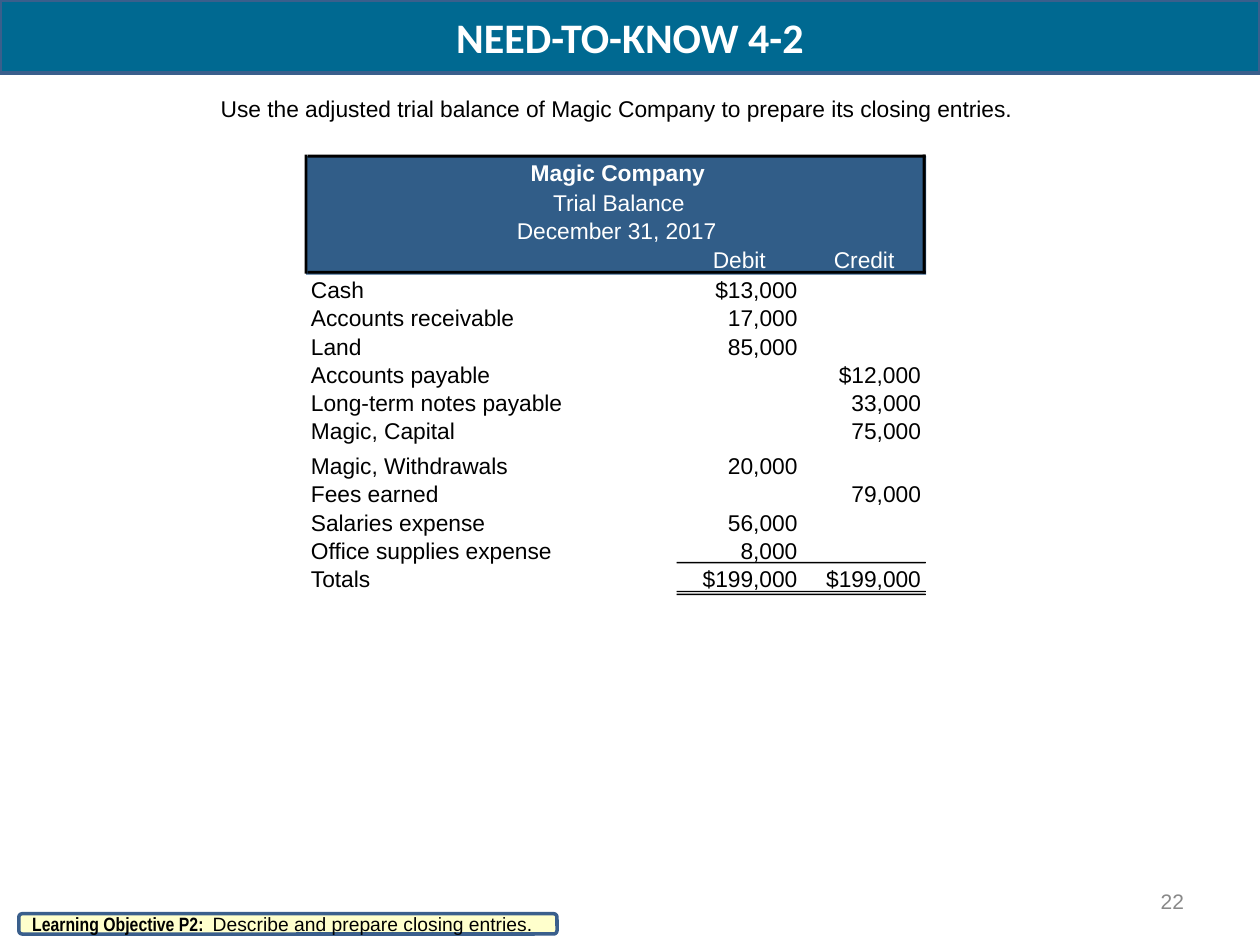
from lxml import etree
from pptx import Presentation
from pptx.dml.color import RGBColor
from pptx.enum.shapes import MSO_CONNECTOR, MSO_SHAPE
from pptx.enum.text import MSO_ANCHOR, PP_ALIGN
from pptx.oxml.ns import qn
from pptx.util import Cm, Pt

RECT, ROUND = MSO_SHAPE.RECTANGLE, MSO_SHAPE.ROUNDED_RECTANGLE
LINE = MSO_CONNECTOR.STRAIGHT
LEFT, CENTER, RIGHT = PP_ALIGN.LEFT, PP_ALIGN.CENTER, PP_ALIGN.RIGHT
TOP, MIDDLE = MSO_ANCHOR.TOP, MSO_ANCHOR.MIDDLE

BLACK = RGBColor(0, 0, 0)
WHITE = RGBColor(0xFF, 0xFF, 0xFF)
TEAL = RGBColor(0x00, 0x69, 0x91)
NAVY = RGBColor(0x31, 0x5D, 0x88)
EDGE = RGBColor(0x3A, 0x5F, 0x8C)
CREAM = RGBColor(0xFF, 0xFF, 0xCC)
GRAY = RGBColor(0x89, 0x89, 0x89)

# Accounts: name, name width, debit, credit
ROWS = [
    ("Cash", 1.22, "$13,000", ""),
    ("Accounts receivable", 4.22, "17,000", ""),
    ("Land", 1.19, "85,000", ""),
    ("Accounts payable", 3.76, "", "$12,000"),
    ("Long-term notes payable", 5.18, "", "33,000"),
    ("Magic, Capital", 2.95, "", "75,000"),
    ("Magic, Withdrawals", 4.01, "20,000", ""),
    ("Fees earned", 2.72, "", "79,000"),
    ("Salaries expense", 3.66, "56,000", ""),
    ("Office supplies expense", 4.98, "8,000", ""),
    ("Totals", 1.42, "$199,000", "$199,000"),
]
ROW_TOP, ROW_STEP, ROW_HIGH = 5.56, 0.57, 0.63
GAP_ROW, GAP = 6, 0.13
NAME_X, DEBIT_END, CREDIT_END = 6.27, 16.08, 18.57
DIGIT, COMMA, SLACK = 0.255, 0.13, 0.18


class Page:
    def __init__(self, slide):
        self.shapes = slide.shapes
        self.font, self.size = "Arial", 13

    def style(self, run, color, size=None, font=None, bold=False):
        run.font.name = font or self.font
        run.font.size = Pt(size or self.size)
        run.font.bold = bold
        run.font.color.rgb = color

    def box(self, x, y, w, h, fill, edge=None, kind=RECT):
        shape = self.shapes.add_shape(kind, Cm(x), Cm(y), Cm(w), Cm(h))
        shape.shadow.inherit = False
        shape.fill.solid()
        shape.fill.fore_color.rgb = fill
        if edge is None:
            shape.line.fill.background()
        else:
            shape.line.color.rgb = edge
            shape.line.width = Pt(2)
        return shape

    def label(self, text, x, y, w, h=ROW_HIGH, color=BLACK, align=LEFT,
              anchor=TOP, size=None, bold=False):
        frame = self.shapes.add_textbox(Cm(x), Cm(y), Cm(w), Cm(h)).text_frame
        frame.word_wrap = False
        frame.vertical_anchor = anchor
        frame.margin_left = frame.margin_right = 0
        frame.margin_top = frame.margin_bottom = 0
        frame.text = text
        para = frame.paragraphs[0]
        para.alignment = align
        self.style(para.runs[0], color, size, bold=bold)

    def amount(self, text, end, y):
        if text:
            wide = DIGIT * (len(text) - 1) + COMMA
            self.label(text, end - wide, y, wide + SLACK)

    def rule(self, x, y, w):
        line = self.shapes.add_connector(LINE, Cm(x), Cm(y), Cm(x + w), Cm(y))
        line.line.color.rgb = BLACK
        line.line.width = Pt(0.1)
        etree.SubElement(line._element.spPr, qn("a:effectLst"))
        self.box(x, y, w, 0.03, BLACK)


def main():
    deck = Presentation()
    deck.slide_width, deck.slide_height = Cm(25.4), Cm(19.05)
    page = Page(deck.slides.add_slide(deck.slide_layouts[6]))

    # Title bar
    frame = page.box(0, 0, 25.4, 1.47, TEAL, EDGE).text_frame
    frame.text = "NEED-TO-KNOW 4-2"
    frame.vertical_anchor = MIDDLE
    frame.paragraphs[0].alignment = CENTER
    page.style(frame.paragraphs[0].runs[0], WHITE, 24, "Calibri", True)

    # Task
    page.label("Use the adjusted trial balance of Magic Company to prepare "
               "its closing entries.", 4.45, 1.91, 16.18, 0.56)

    # Statement heading
    page.box(6.17, 3.15, 12.5, 2.39, NAVY)
    for text, x, y, w, bold in [
        ("Magic Company", 10.7, 3.2, 3.66, True),
        ("Trial Balance", 11.15, 3.81, 2.82, False),
        ("December 31, 2017", 10.42, 4.37, 4.09, False),
        ("Debit", 14.37, 4.95, 1.22, False),
        ("Credit", 16.81, 4.95, 1.4, False),
    ]:
        page.label(text, x, y, w, color=WHITE, bold=bold)

    # Heading frame
    for x in (6.14, 18.6):
        page.box(x, 3.12, 0.06, 2.4, BLACK)
    for y in (3.12, 5.46):
        page.box(6.2, y, 12.46, 0.06, BLACK)

    # Account rows
    for i, (name, wide, debit, credit) in enumerate(ROWS):
        y = ROW_TOP + i * ROW_STEP + (GAP if i >= GAP_ROW else 0)
        page.label(name, NAME_X, y, wide)
        page.amount(debit, DEBIT_END, y)
        page.amount(credit, CREDIT_END, y)

    # Single rule above the totals, double rule below
    for y in (11.33, 11.91, 11.97):
        page.rule(13.64, y, 5.02)

    # Footer
    page.label("22", 18.21, 17.65, 5.66, 1.02, GRAY, RIGHT, MIDDLE, 12)
    frame = page.box(0.38, 18.42, 10.85, 0.41, CREAM, EDGE, ROUND).text_frame
    frame.vertical_anchor = MIDDLE
    para = frame.paragraphs[0]
    para.alignment = LEFT
    for text, font, bold in [
        ("Learning Objective P2:  ", "Arial Narrow", True),
        ("Describe and prepare closing entries.", "Arial", False),
    ]:
        run = para.add_run()
        run.text = text
        page.style(run, BLACK, 11, font, bold)

    deck.save("out.pptx")


if __name__ == "__main__":
    main()
